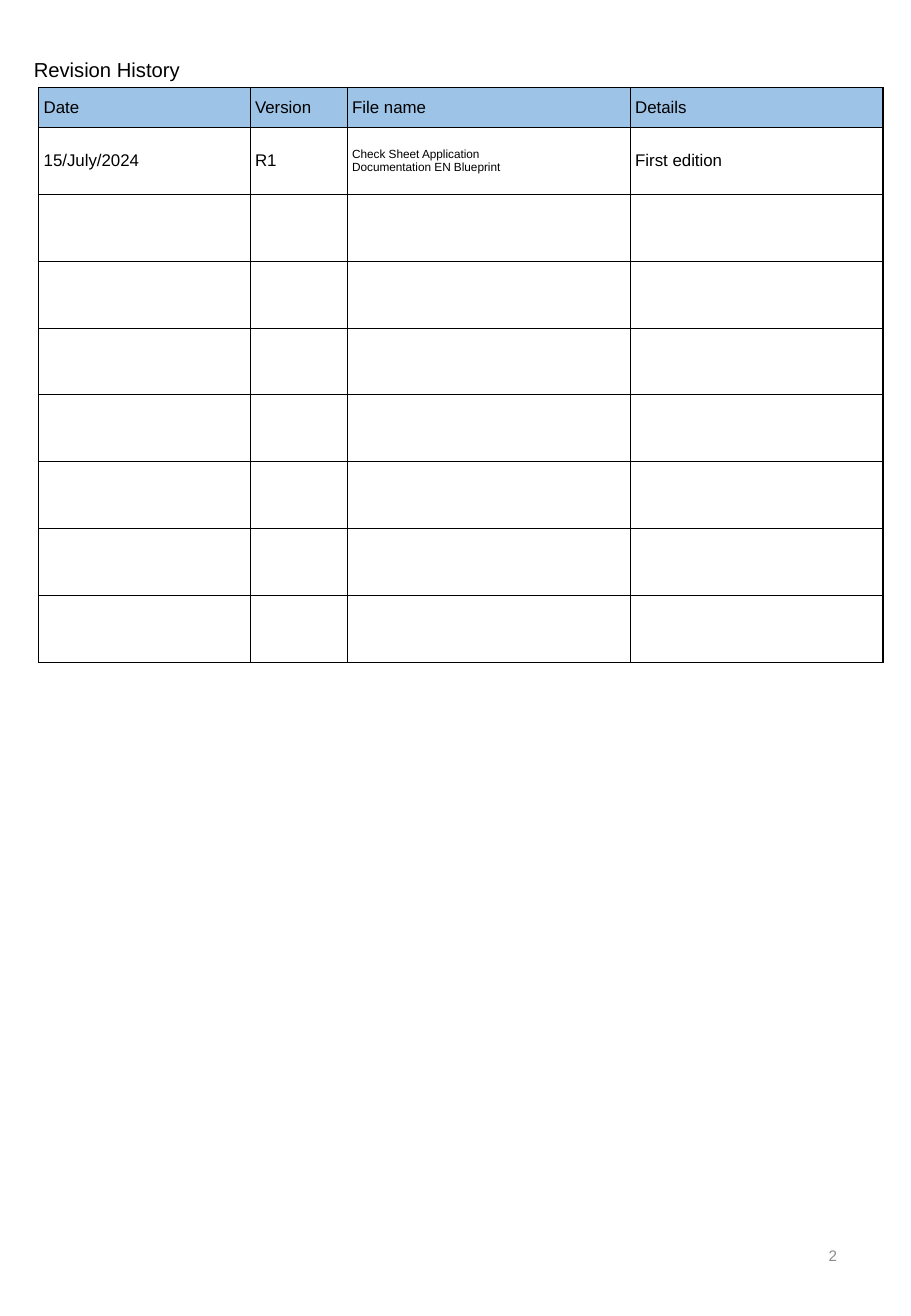
from dataclasses import dataclass

from lxml.etree import SubElement
from pptx import Presentation
from pptx.dml.color import RGBColor
from pptx.enum.text import MSO_ANCHOR as Anchor, MSO_AUTO_SIZE as AutoSize, PP_ALIGN as Align
from pptx.oxml.ns import qn
from pptx.util import Inches, Pt


@dataclass(frozen=True)
class Theme:
    """Colours, font and type sizes of the page."""
    font: str = "Arial"
    ink: str = "000000"
    header: str = "9DC3E6"
    muted: str = "8C8C8C"
    title_size: float = 12
    body_size: float = 10
    small_size: float = 7
    number_size: float = 9
    border: float = 0.75


class Page:
    """Draws text and tables on one slide in one theme."""

    def __init__(self, slide, theme):
        """Keep the slide and its theme."""
        self.slide = slide
        self.theme = theme

    def style(self, text_frame, size, color):
        """Format every run of a text frame."""
        for paragraph in text_frame.paragraphs:
            for run in paragraph.runs:
                run.font.name = self.theme.font
                run.font.size = Pt(size)
                run.font.color.rgb = RGBColor.from_string(color)

    def text(self, text, box, size, color, align=Align.LEFT, indent=0):
        """Add a vertically centred text box."""
        shape = self.slide.shapes.add_textbox(*map(Inches, box))
        text_frame = shape.text_frame
        text_frame.word_wrap = True
        text_frame.auto_size = AutoSize.NONE
        text_frame.vertical_anchor = Anchor.MIDDLE
        text_frame.text = text
        paragraph = text_frame.paragraphs[0]
        paragraph.alignment = align
        if indent:
            properties = paragraph._p.get_or_add_pPr()
            properties.set("marL", "0")
            properties.set("indent", str(Inches(indent)))
        self.style(text_frame, size, color)

    def borders(self, cell):
        """Rule all four sides of a cell."""
        properties = cell._tc.get_or_add_tcPr()
        for side in ("lnL", "lnR", "lnT", "lnB"):
            line = SubElement(properties, qn(f"a:{side}"), w=str(Pt(self.theme.border)))
            fill = SubElement(line, qn("a:solidFill"))
            SubElement(fill, qn("a:srgbClr"), val=self.theme.ink)

    def cell(self, cell, text, is_header):
        """Fill, rule and write one table cell."""
        cell.margin_left, cell.margin_right = Inches(0.04), Inches(0.1)
        cell.margin_top = cell.margin_bottom = Inches(0.05)
        cell.vertical_anchor = Anchor.MIDDLE
        self.borders(cell)
        if is_header:
            cell.fill.solid()
            cell.fill.fore_color.rgb = RGBColor.from_string(self.theme.header)
        else:
            cell.fill.background()
        if text:
            cell.text_frame.text = text
            size = self.theme.small_size if "\n" in text else self.theme.body_size
            self.style(cell.text_frame, size, self.theme.ink)

    def table(self, rows, left, top, widths, heights):
        """Add a ruled table with a coloured header row."""
        box = map(Inches, (left, top, sum(widths), sum(heights)))
        table = self.slide.shapes.add_table(len(rows), len(widths), *box).table
        table.first_row = table.horz_banding = False
        for column, width in zip(table.columns, widths):
            column.width = Inches(width)
        for index, (values, height) in enumerate(zip(rows, heights)):
            table.rows[index].height = Inches(height)
            for column, value in enumerate(values):
                self.cell(table.cell(index, column), value, index == 0)


def main():
    """Build the revision history page."""
    presentation = Presentation()
    presentation.slide_width, presentation.slide_height = Inches(7.5), Inches(10.83)
    theme = Theme()
    page = Page(presentation.slides.add_slide(presentation.slide_layouts[6]), theme)

    page.text("Revision History", (0.12, 0.42, 1.56, 0.3),
              theme.title_size, theme.ink, indent=0.06)
    widths = [1.74, 0.8, 2.33, 2.08]
    empty_rows = 7
    rows = [
        ["Date", "Version", "File name", "Details"],
        ["15/July/2024", "R1", "Check Sheet Application\nDocumentation EN Blueprint",
         "First edition"],
    ] + [[""] * len(widths)] * empty_rows
    page.table(rows, 0.32, 0.72, widths, [0.33] + [0.55] * (len(rows) - 1))
    page.text("2", (5.3, 10.04, 1.69, 0.58), theme.number_size, theme.muted, Align.RIGHT)

    presentation.save("out.pptx")


if __name__ == "__main__":
    main()
